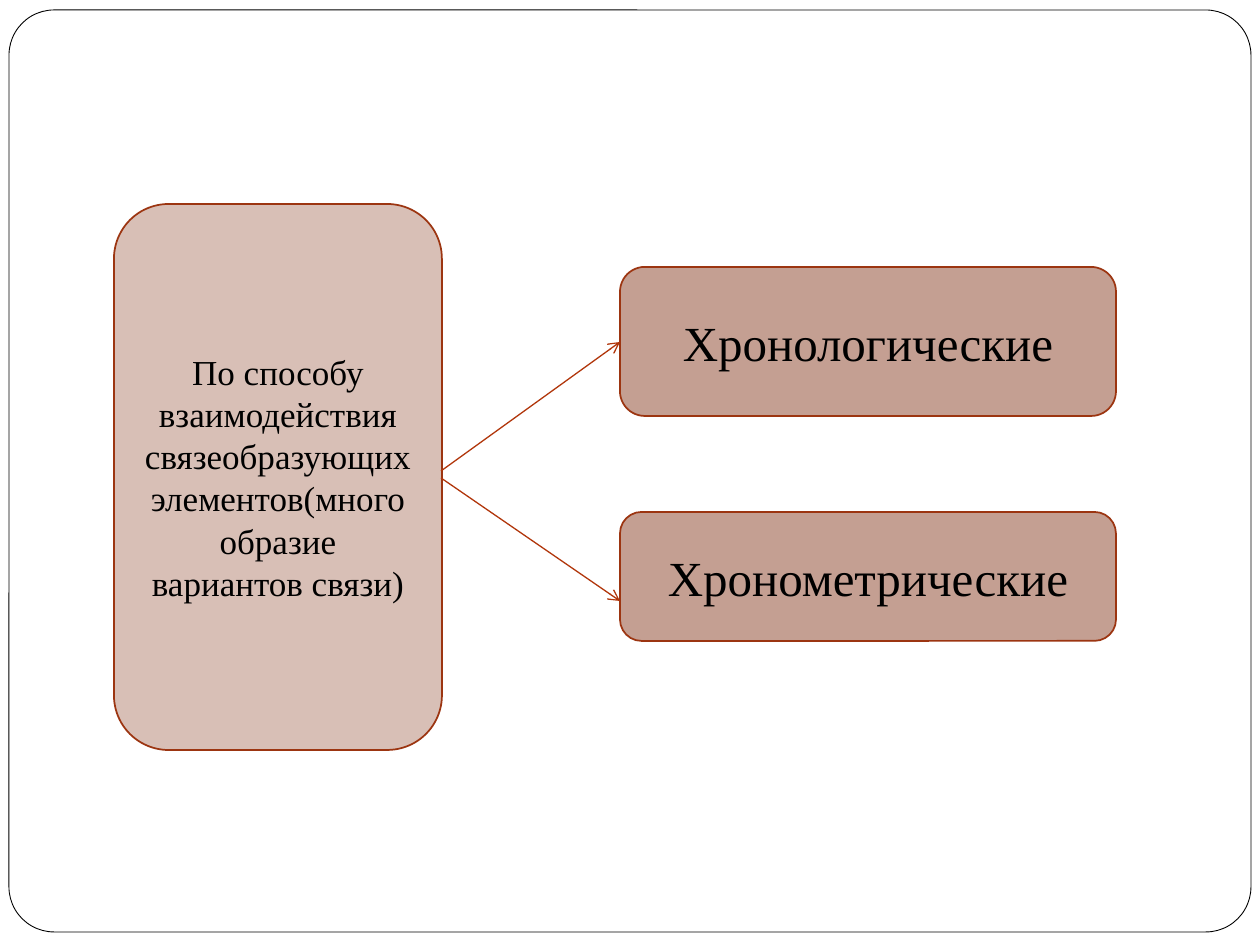
from pptx import Presentation
from pptx.dml.color import RGBColor
from pptx.enum.shapes import MSO_CONNECTOR as Connector, MSO_SHAPE as Shape
from pptx.enum.text import MSO_ANCHOR as Anchor, PP_ALIGN as Align
from pptx.oxml.ns import qn
from pptx.util import Emu, Pt
from lxml.etree import SubElement

COLORS = {
    "paper": "FFFFFF",
    "ink": "000000",
    "basis": "D8BFB6",
    "kind": "C49F92",
    "border": "9C3511",
    "arrow": "B1360B",
}


class Diagram:
    """Holds the style and the current page, and draws each kind of element."""

    font = "Times New Roman"
    scale = 914400 / 126

    def __init__(self, page):
        self.page = page

    def lengths(self, *pixels):
        return [Emu(round(value * self.scale)) for value in pixels]

    def color(self, name):
        return RGBColor.from_string(COLORS[name])

    def apply(self, target, values):
        for name, value in values.items():
            setattr(target, name, value)

    def stroke(self, line, color, width):
        line.color.rgb = self.color(color)
        line.width = Pt(width)

    def panel(self, place, fill, border, width, rounding):
        box = self.page.shapes.add_shape(Shape.ROUNDED_RECTANGLE, *self.lengths(*place))
        box.adjustments[0] = rounding
        box.shadow.inherit = False
        box.fill.solid()
        box.fill.fore_color.rgb = self.color(fill)
        self.stroke(box.line, border, width)
        return box

    def label(self, place, fill, text, size):
        box = self.panel(place, fill, "border", 1, 0.1667)
        self.apply(box.text_frame, {"word_wrap": True, "vertical_anchor": Anchor.MIDDLE})
        para = box.text_frame.paragraphs[0]
        para.alignment = Align.CENTER
        span = para.add_run()
        span.text = text
        self.apply(span.font, {"name": self.font, "size": Pt(size)})
        span.font.color.rgb = self.color("ink")

    def arrow(self, start, end):
        link = self.page.shapes.add_connector(
            Connector.STRAIGHT, *self.lengths(*start, *end)
        )
        self.stroke(link.line, "arrow", 0.75)
        SubElement(link.line._get_or_add_ln(), qn("a:tailEnd"), type="arrow")
        SubElement(link._element.spPr, qn("a:effectLst"))


def main():
    deck = Presentation()
    page = deck.slides.add_slide(deck.slide_layouts[6])
    diagram = Diagram(page)
    deck.slide_width, deck.slide_height = diagram.lengths(1260, 945)

    diagram.panel((9, 10, 1242, 922), "paper", "ink", 0.5, 0.049)
    diagram.label(
        (114, 204, 328, 546),
        "basis",
        "По способу взаимодействия связеобразующих элементов(многообразие вариантов связи)",
        20,
    )
    kinds = [
        ("Хронологические", 267, 149, 471, 342),
        ("Хронометрические", 512, 129, 478, 601),
    ]
    for text, top, height, start, end in kinds:
        diagram.label((620, top, 496, height), "kind", text, 28)
        diagram.arrow((441, start), (620, end))

    deck.save("out.pptx")


if __name__ == "__main__":
    main()
